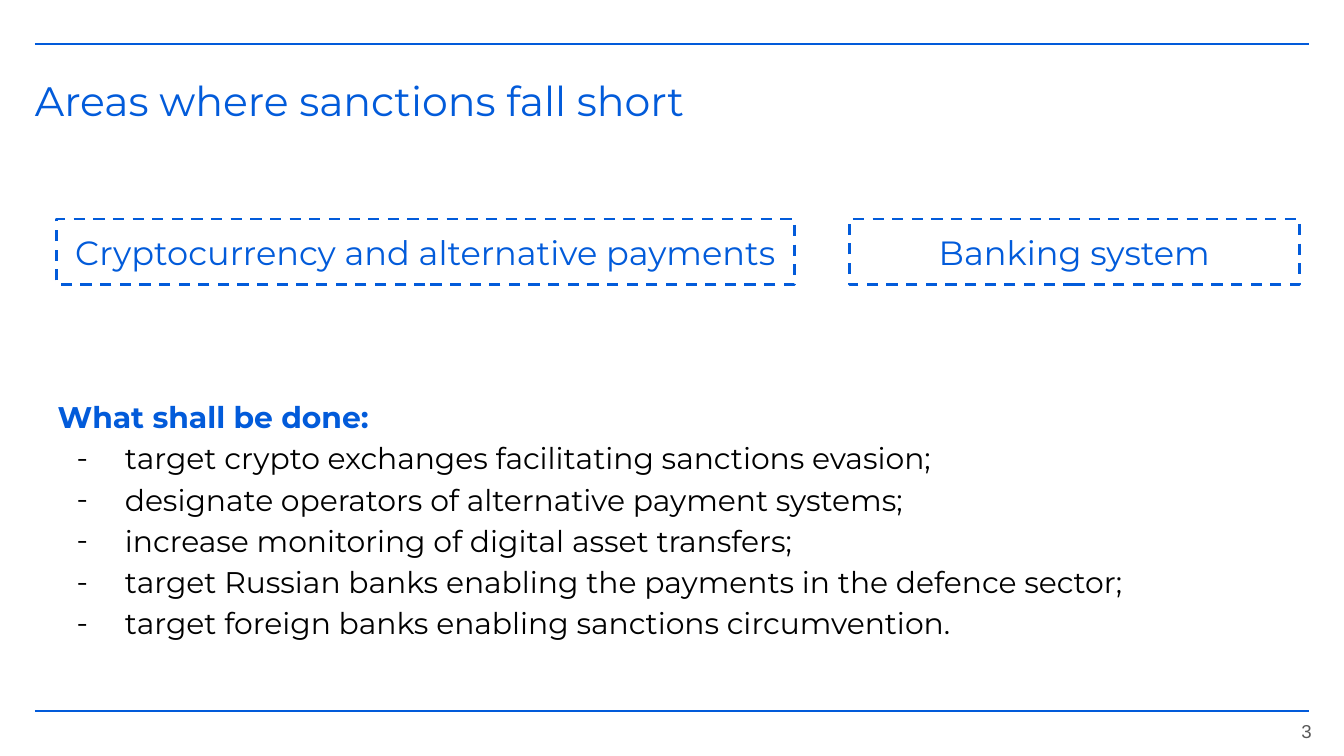
from dataclasses import dataclass

import pptx
import pptx.dml.color
import pptx.enum.dml
import pptx.enum.shapes
import pptx.enum.text
import pptx.oxml.xmlchemy
import pptx.util
from lxml import etree
from pptx.oxml import ns

Cm = pptx.util.Cm
Pt = pptx.util.Pt
RGBColor = pptx.dml.color.RGBColor
Align = pptx.enum.text.PP_ALIGN
Anchor = pptx.enum.text.MSO_ANCHOR


@dataclass(frozen=True)
class Theme:
    blue: RGBColor = RGBColor(0x02, 0x5B, 0xDA)
    black: RGBColor = RGBColor(0, 0, 0)
    gray: RGBColor = RGBColor(0x59, 0x59, 0x59)
    font: str = "Montserrat"
    number_font: str = "Arial"
    title_size: int = 22
    box_size: int = 18
    body_size: int = 16
    number_size: int = 10


theme = Theme()


def write(paragraph, text, *, size, color=theme.blue, font=theme.font, bold=False,
          align=Align.LEFT, spacing=1.0, bullet=None):
    paragraph.alignment = align
    paragraph.line_spacing = spacing
    paragraph.space_before = paragraph.space_after = Pt(0)
    run = paragraph.add_run()
    run.text = text
    run.font.size = Pt(size)
    run.font.name = font
    run.font.bold = bold
    run.font.color.rgb = color

    properties = paragraph._p.get_or_add_pPr()
    properties.set("marL", str(Cm(1.27) if bullet else 0))
    properties.set("indent", str(Cm(-0.91) if bullet else 0))
    if bullet:
        bullet_color = etree.SubElement(properties, ns.qn("a:buClr"))
        etree.SubElement(bullet_color, ns.qn("a:srgbClr"), val=str(color))
        etree.SubElement(properties, ns.qn("a:buFont"), typeface=font)
        etree.SubElement(properties, ns.qn("a:buChar"), char=bullet)
    else:
        etree.SubElement(properties, ns.qn("a:buNone"))


def set_frame(frame, horizontal, vertical, anchor=Anchor.TOP):
    frame.word_wrap = True
    frame.auto_size = pptx.enum.text.MSO_AUTO_SIZE.NONE
    frame.vertical_anchor = anchor
    frame.margin_left = frame.margin_right = Cm(horizontal)
    frame.margin_top = frame.margin_bottom = Cm(vertical)


presentation = pptx.Presentation()
presentation.slide_width = Cm(25.4)
presentation.slide_height = Cm(14.29)
slide = presentation.slides.add_slide(presentation.slide_layouts[1])

# Rules at the top and bottom
for y in (0.84, 13.44):
    rule = slide.shapes.add_connector(
        pptx.enum.shapes.MSO_CONNECTOR.STRAIGHT, Cm(0.66), Cm(y), Cm(24.74), Cm(y))
    rule.line.color.rgb = theme.blue
    rule.line.width = Pt(1.13)
    etree.SubElement(rule._element.spPr, ns.qn("a:effectLst"))

# Title
title = slide.shapes.title
title.left, title.top, title.width, title.height = Cm(0.66), Cm(1.42), Cm(24.1), Cm(0.94)
set_frame(title.text_frame, 0, 0)
write(title.text_frame.paragraphs[0], "Areas where sanctions fall short", size=theme.title_size)

# Dashed boxes naming the areas
areas = [
    ("Cryptocurrency and alternative payments", 1.07, 13.94),
    ("Banking system", 16.05, 8.51),
]
for text, left, width in areas:
    box = slide.shapes.add_shape(
        pptx.enum.shapes.MSO_SHAPE.RECTANGLE, Cm(left), Cm(4.14), Cm(width), Cm(1.24))
    box.shadow.inherit = False
    box.fill.background()
    box.line.color.rgb = theme.blue
    box.line.width = Pt(1.5)
    box.line.dash_style = pptx.enum.dml.MSO_LINE.DASH
    set_frame(box.text_frame, 0.25, 0.25)
    write(box.text_frame.paragraphs[0], text, size=theme.box_size, align=Align.CENTER)

# Recommended actions
actions = [
    "target crypto exchanges facilitating sanctions evasion;",
    "designate operators of alternative payment systems;",
    "increase monitoring of digital asset transfers;",
    "target Russian banks enabling the payments in the defence sector;",
    "target foreign banks enabling sanctions circumvention.",
]
body = slide.placeholders[1]
body.left, body.top, body.width, body.height = Cm(0.84), Cm(7.19), Cm(23.72), Cm(5.59)
set_frame(body.text_frame, 0.25, 0.25)
write(body.text_frame.paragraphs[0], "What shall be done:", size=theme.body_size,
      bold=True, align=Align.JUSTIFY, spacing=1.15)
for action in actions:
    write(body.text_frame.add_paragraph(), action, size=theme.body_size,
          color=theme.black, align=Align.JUSTIFY, spacing=1.15, bullet="-")

# Page number
number = slide.shapes.add_textbox(Cm(22), Cm(13.56), Cm(2.97), Cm(0.51))
set_frame(number.text_frame, 0.18, 0.1, Anchor.MIDDLE)
write(number.text_frame.paragraphs[0], "3", size=theme.number_size, color=theme.gray,
      font=theme.number_font, align=Align.RIGHT)

presentation.save("out.pptx")
